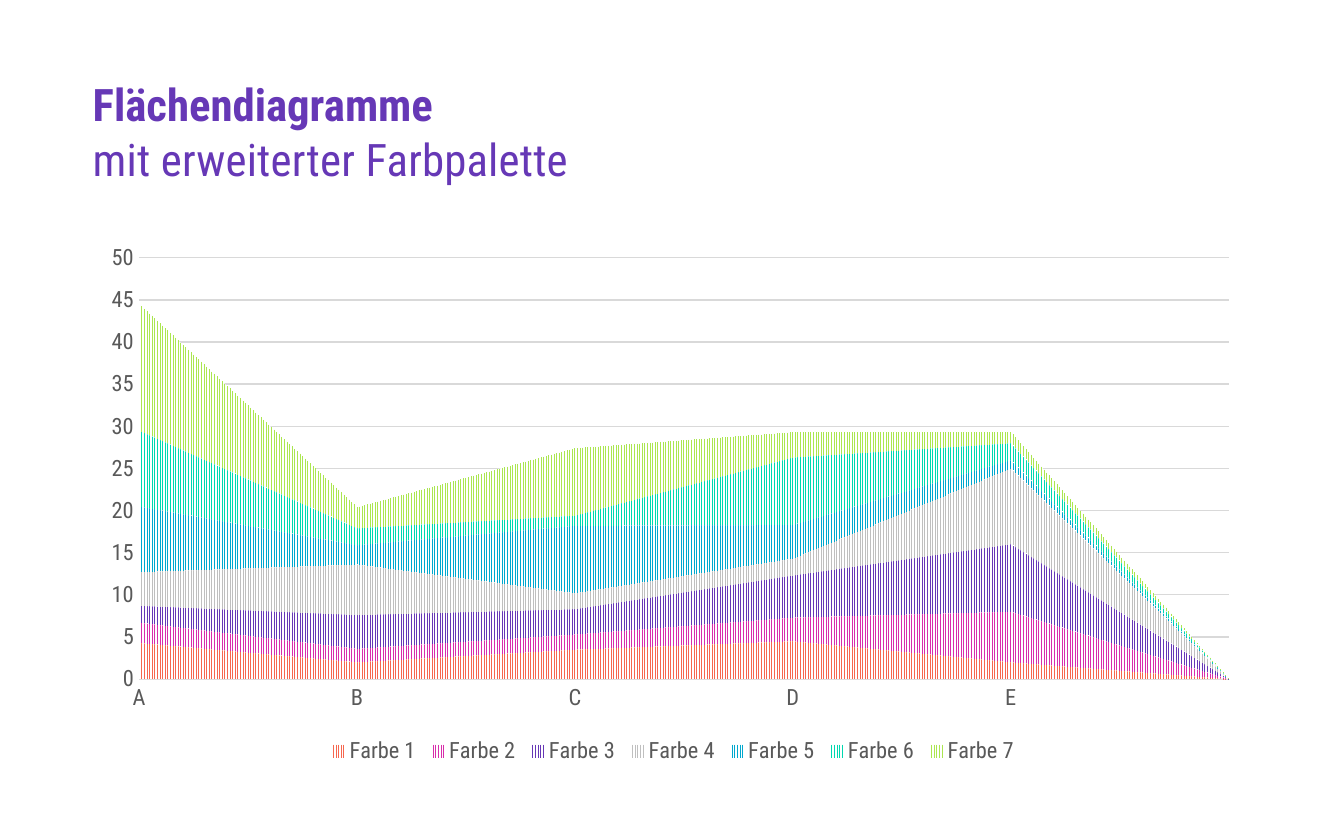
from lxml import etree
from pptx import Presentation
from pptx.chart.data import CategoryChartData
from pptx.dml.color import RGBColor
from pptx.enum import chart as charts, dml
from pptx.oxml import ns
from pptx.util import Pt

FONT = "Roboto Condensed"
VIOLET = RGBColor(0x66, 0x38, 0xB6)
WHITE = RGBColor(0xFF, 0xFF, 0xFF)
LABEL = RGBColor(0x59, 0x59, 0x59)
GRID = RGBColor(0xD9, 0xD9, 0xD9)

CATEGORIES = ["A", "B", "C", "D", "E", ""]
SERIES = [
    (RGBColor(0xF6, 0x67, 0x4F), (4.3, 2, 3.5, 4.5, 2, None)),
    (RGBColor(0xD8, 0x2D, 0xAB), (2.4, 1.6, 1.8, 2.8, 6, None)),
    (RGBColor(0x66, 0x37, 0xB6), (2, 4, 3, 5, 8, None)),
    (RGBColor(0xBF, 0xBF, 0xBF), (4, 6, 1.9, 2, 9, None)),
    (RGBColor(0x00, 0xA8, 0xCE), (7.8, 2.3, 8, 4, 1, None)),
    (RGBColor(0x00, 0xD8, 0xAF), (9, 2, 1.2, 8, 2, None)),
    (RGBColor(0xAB, 0xE6, 0x50), (15, 2.5, 8, 3, 1.3, None)),
]


def add_heading(page, left, top, width, height, words, bold, line_spacing, tracking):
    """Place one line of the heading in the given box."""
    box = page.shapes.add_textbox(Pt(left), Pt(top), Pt(width), Pt(height))
    frame = box.text_frame
    frame.word_wrap = True
    frame.margin_left = frame.margin_right = Pt(0)
    frame.margin_top = frame.margin_bottom = Pt(0)
    para = frame.paragraphs[0]
    para.line_spacing = line_spacing
    span = para.add_run()
    span.text = words
    span.font.name = FONT
    span.font.size = Pt(24)
    span.font.bold = bold
    span.font.color.rgb = VIOLET
    span.font._element.set("spc", str(tracking))


def style_font(font):
    """Give chart text its typeface, size and colour."""
    font.name = FONT
    font.size = Pt(12)
    font.color.rgb = LABEL


def set_plot_layout(chart, **fractions):
    """Fix the inner plot area as fractions of the chart box."""
    area = chart._chartSpace.chart.plotArea
    for layout in area.findall(ns.qn("c:layout")):
        area.remove(layout)
    layout = etree.Element(ns.qn("c:layout"))
    manual = etree.SubElement(layout, ns.qn("c:manualLayout"))
    settings = {"layoutTarget": "inner", "xMode": "edge", "yMode": "edge", **fractions}
    for name, value in settings.items():
        etree.SubElement(manual, ns.qn(f"c:{name}")).set("val", str(value))
    area.insert(0, layout)


def style_axes(chart):
    """Style both axes and the horizontal gridlines."""
    for axis in (chart.category_axis, chart.value_axis):
        axis.major_tick_mark = axis.minor_tick_mark = charts.XL_TICK_MARK.NONE
        style_font(axis.tick_labels.font)
    chart.category_axis.has_major_gridlines = False
    values = chart.value_axis
    values.minimum_scale, values.maximum_scale, values.major_unit = 0, 50, 5
    values.has_major_gridlines = True
    values.format.line.fill.background()
    for line in (chart.category_axis.format.line, values.major_gridlines.format.line):
        line.color.rgb = GRID
        line.width = Pt(0.75)


def add_area_chart(page, left, top, width, height):
    """Place the stacked area chart with striped series in the given box."""
    data = CategoryChartData()
    data.categories = CATEGORIES
    for number, (_, values) in enumerate(SERIES, 1):
        data.add_series(f"Farbe {number}", values)
    chart = page.shapes.add_chart(
        charts.XL_CHART_TYPE.AREA_STACKED, Pt(left), Pt(top), Pt(width), Pt(height), data
    ).chart
    chart.has_title = False
    style_font(chart.font)
    style_axes(chart)
    for series, (colour, _) in zip(chart.plots[0].series, SERIES):
        fill = series.format.fill
        fill.patterned()
        fill.pattern = dml.MSO_PATTERN.NARROW_VERTICAL
        fill.fore_color.rgb = colour
        fill.back_color.rgb = WHITE
    chart.has_legend = True
    chart.legend.position = charts.XL_LEGEND_POSITION.BOTTOM
    chart.legend.include_in_layout = False
    style_font(chart.legend.font)
    for blanks in chart._chartSpace.chart.findall(ns.qn("c:dispBlanksAs")):
        blanks.set("val", "zero")
    set_plot_layout(chart, x=0.04, y=0.04, w=0.94, h=0.79)


def main():
    """Build the slide and save it."""
    deck = Presentation()
    deck.slide_width, deck.slide_height = Pt(720), Pt(450)
    page = deck.slides.add_slide(deck.slide_layouts[6])
    left, width = 49.7, 621
    add_heading(page, left, 44.6, width, 23, "Flächendiagramme", True, 0.9, 0)
    add_heading(page, left, 67.7, width, 26, "mit erweiterter Farbpalette", False, 1.1, 10)
    add_area_chart(page, left, 126.7, width, 285.8)
    deck.save("out.pptx")


if __name__ == "__main__":
    main()
